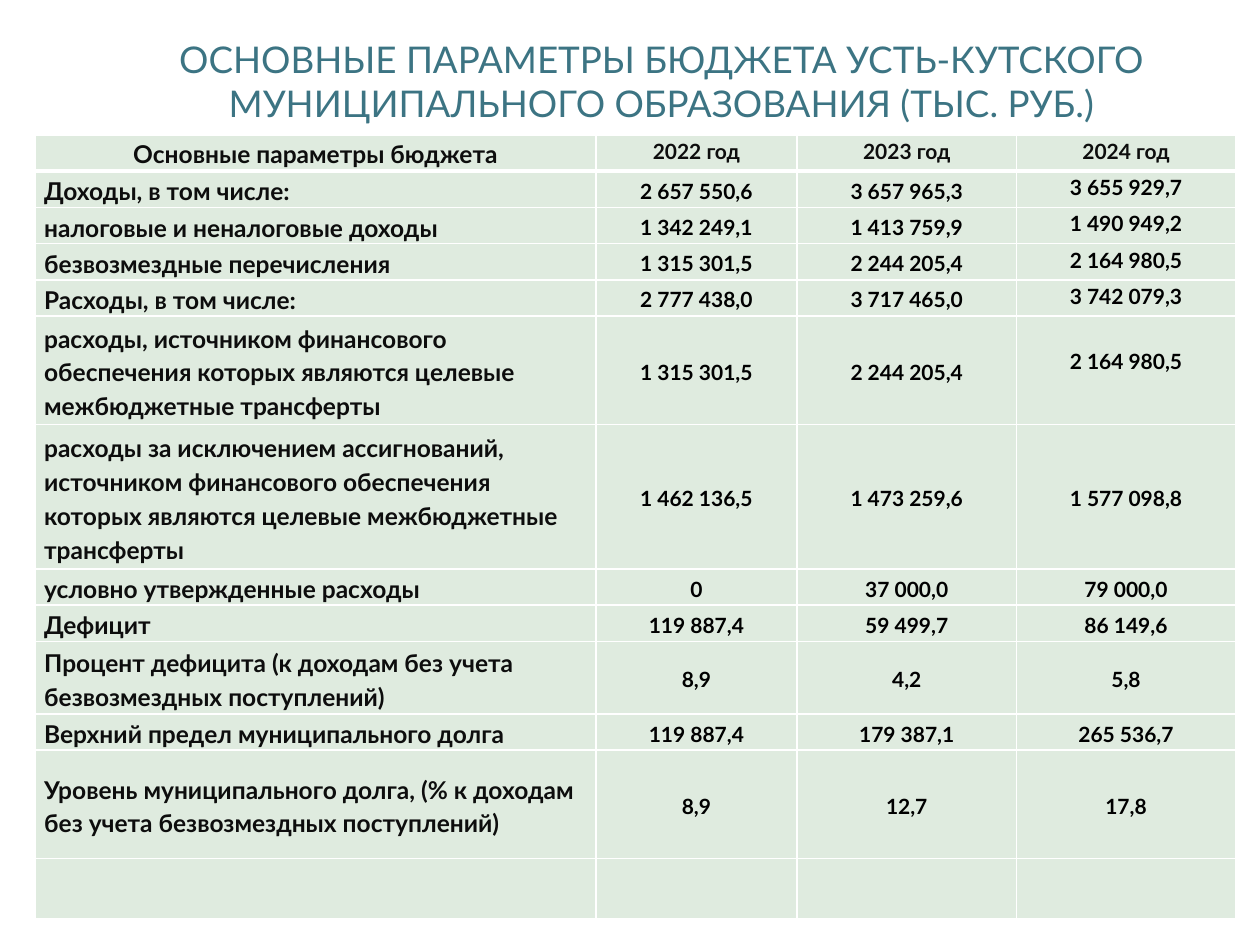
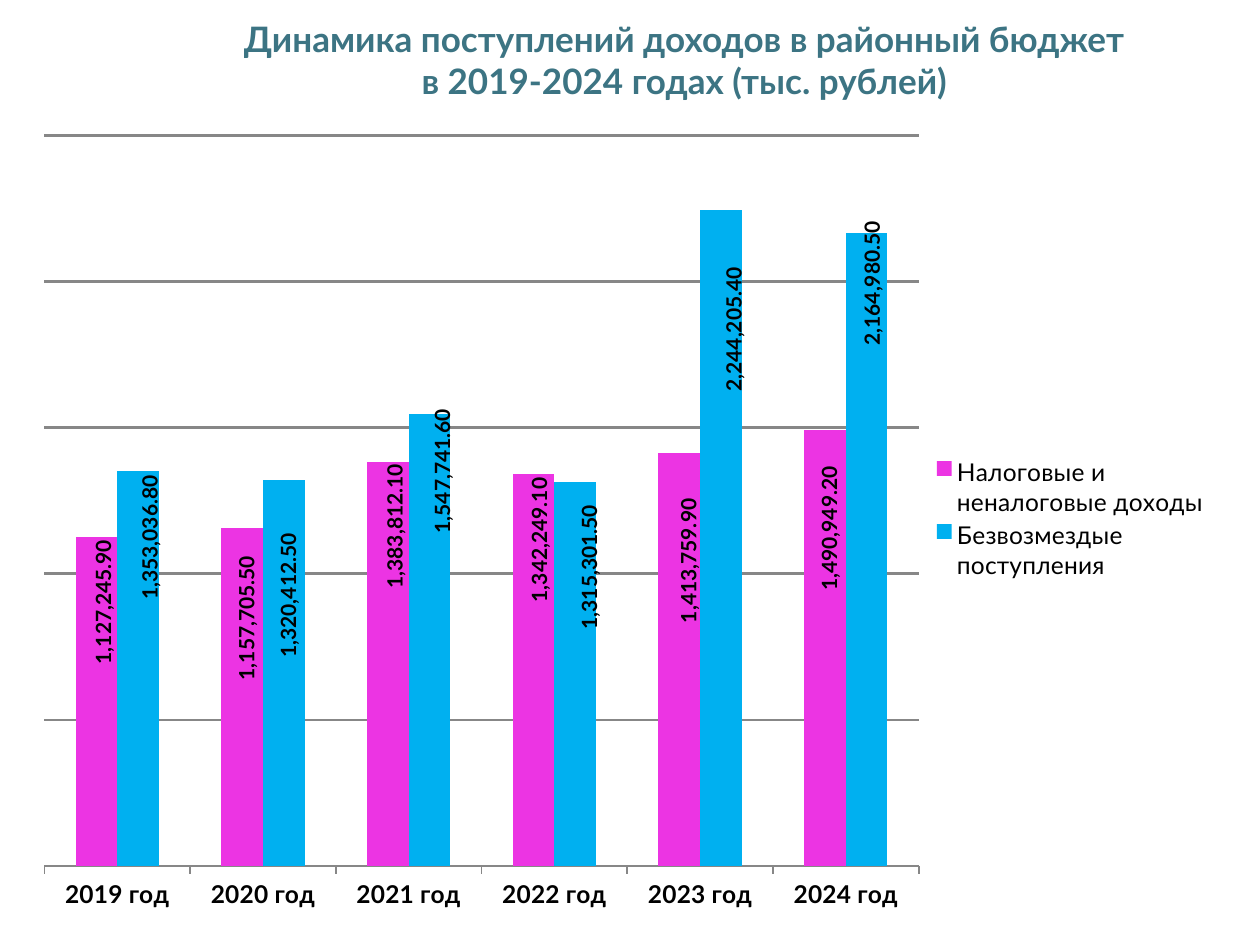
from lxml import etree
from pptx import Presentation
from pptx.chart.data import CategoryChartData
from pptx.dml.color import RGBColor
from pptx.enum.chart import XL_CHART_TYPE, XL_LABEL_POSITION, XL_LEGEND_POSITION, XL_TICK_MARK
from pptx.enum.text import MSO_ANCHOR, MSO_AUTO_SIZE, PP_ALIGN
from pptx.oxml.ns import qn
from pptx.util import Cm, Pt

# Shared look
FONT = "Lato"
TEAL = RGBColor(0x3C, 0x74, 0x83)
PALE_GREEN = RGBColor(0xDF, 0xEB, 0xDF)
WHITE = RGBColor(0xFF, 0xFF, 0xFF)
BLACK = RGBColor(0, 0, 0)
NEAR_BLACK = RGBColor(0x0D, 0x0D, 0x0D)
GREY = RGBColor(0x87, 0x87, 0x87)
MAGENTA = RGBColor(0xEC, 0x34, 0xE3)
SKY_BLUE = RGBColor(0x00, 0xB0, 0xF0)
LEFT, CENTER = PP_ALIGN.LEFT, PP_ALIGN.CENTER
TOP, MIDDLE = MSO_ANCHOR.TOP, MSO_ANCHOR.MIDDLE
NO_AUTOFIT = MSO_AUTO_SIZE.NONE
CLUSTERED = XL_CHART_TYPE.COLUMN_CLUSTERED
OUTSIDE_END = XL_LABEL_POSITION.OUTSIDE_END
LEGEND_RIGHT = XL_LEGEND_POSITION.RIGHT
TICK_OUT, TICK_NONE = XL_TICK_MARK.OUTSIDE, XL_TICK_MARK.NONE
TITLE_ONLY = 5
NUMBER_FORMAT = "#,##0.00"
C15 = "http://schemas.microsoft.com/office/drawing/2012/chart"
C15_LABELS = "{CE6537A1-D6FC-4f65-9D91-7224C49458BB}"

# Budget table: row height in cm, label, one value per year
COLUMN_WIDTHS = [11.3, 4.06, 4.42, 4.42]
LINE, TWO_LINES, THREE_LINES, FOUR_LINES = 0.73, 1.46, 2.19, 2.91
BUDGET_ROWS = [
    (LINE, "Основные параметры бюджета", "2022 год", "2023 год", "2024 год"),
    (LINE, "Доходы, в том числе:", "2 657 550,6", "3 657 965,3", "3 655 929,7"),
    (LINE, "налоговые и неналоговые доходы", "1 342 249,1", "1 413 759,9", "1 490 949,2"),
    (LINE, "безвозмездные перечисления", "1 315 301,5", "2 244 205,4", "2 164 980,5"),
    (LINE, "Расходы, в том числе:", "2 777 438,0", "3 717 465,0", "3 742 079,3"),
    (THREE_LINES, "расходы, источником финансового обеспечения которых являются "
     "целевые межбюджетные трансферты", "1 315 301,5", "2 244 205,4", "2 164 980,5"),
    (FOUR_LINES, "расходы за исключением ассигнований, источником финансового "
     "обеспечения которых являются целевые межбюджетные трансферты",
     "1 462 136,5", "1 473 259,6", "1 577 098,8"),
    (LINE, "условно утвержденные расходы", "0", "37 000,0", "79 000,0"),
    (LINE, "Дефицит", "119 887,4", "59 499,7", "86 149,6"),
    (TWO_LINES, "Процент дефицита (к доходам без учета безвозмездных поступлений)",
     "8,9", "4,2", "5,8"),
    (LINE, "Верхний предел муниципального долга", "119 887,4", "179 387,1", "265 536,7"),
    (THREE_LINES, "Уровень муниципального долга, (% к доходам без учета "
     "безвозмездных поступлений)", "8,9", "12,7", "17,8"),
    (1.22, "", "", "", ""),
]
TRANSFERS_ROW = 5
LAST_TOP_ROW = 5  # in the last column, values down to this row sit at the top

# Revenue chart: name, colour, values, label shifts in percent of the chart
YEARS = [f"{year} год" for year in range(2019, 2025)]
REVENUES = [
    ("Налоговые и неналоговые доходы", MAGENTA,
     [1127245.9, 1157705.5, 1383812.1, 1342249.1, 1413759.9, 1490949.2],
     [(0.5, 16.5), (0.3, 19.6), (0.5, 16.4), (0.4, 16.6), (0.7, 21.8), (0.3, 20.6)]),
    ("Безвозмездые поступления", SKY_BLUE,
     [1353036.8, 1320412.5, 1547741.6, 1315301.5, 2244205.4, 2164980.5],
     [(0.9, 16.7), (0.3, 22.7), (1, 15.5), (1.1, 19), (1, 23.2), (0.4, 14.6)]),
]


def set_font(font, size, color=BLACK, bold=False):
    font.name, font.size, font.bold = FONT, Pt(size), bold
    font.color.rgb = color


def write_text(frame, text, size, color=BLACK, bold=False, align=CENTER, spacing=None):
    paragraph = frame.paragraphs[0]
    paragraph.alignment, paragraph.line_spacing = align, spacing
    run = paragraph.add_run()
    run.text = text
    set_font(run.font, size, color, bold)


def add_titled_slide(prs, text, box, **text_format):
    slide = prs.slides.add_slide(prs.slide_layouts[TITLE_ONLY])
    title = slide.shapes.title
    title.left, title.top, title.width, title.height = map(Cm, box)
    frame = title.text_frame
    frame.word_wrap, frame.auto_size, frame.vertical_anchor = True, NO_AUTOFIT, MIDDLE
    write_text(frame, text, color=TEAL, **text_format)
    return slide


def add_cell_border(cell, side, width):
    line = etree.SubElement(cell._tc.get_or_add_tcPr(), qn(f"a:ln{side}"), w=str(Pt(width)))
    fill = etree.SubElement(line, qn("a:solidFill"))
    etree.SubElement(fill, qn("a:srgbClr"), val=str(WHITE))


def format_cell(cell, row, column):
    heavy_sides = {0: "B", 1: "T"}
    for side in "LRTB":
        add_cell_border(cell, side, 3 if heavy_sides.get(row) == side else 1)
    cell.fill.solid()
    cell.fill.fore_color.rgb = PALE_GREEN
    cell.margin_left = cell.margin_right = Cm(0.18)
    cell.margin_top = cell.margin_bottom = 0
    at_top = row == 0 or (column == 3 and row <= LAST_TOP_ROW)
    cell.vertical_anchor = TOP if at_top else MIDDLE


def add_budget_table(slide):
    table = slide.shapes.add_table(
        len(BUDGET_ROWS), len(COLUMN_WIDTHS), Cm(0.71), Cm(2.72),
        Cm(sum(COLUMN_WIDTHS)), Cm(sum(row[0] for row in BUDGET_ROWS))).table
    for column, width in zip(table.columns, COLUMN_WIDTHS):
        column.width = Cm(width)
    for r, (height, *texts) in enumerate(BUDGET_ROWS):
        table.rows[r].height = Cm(height)
        for c, text in enumerate(texts):
            cell = table.cell(r, c)
            format_cell(cell, r, c)
            if text:
                write_text(cell.text_frame, text, size=12 if c else 14, bold=True,
                           color=BLACK if r and c else NEAR_BLACK,
                           align=LEFT if r and not c else CENTER, spacing=1.15)
    # The last transfers value stands one line lower
    table.cell(TRANSFERS_ROW, 3).margin_top = Cm(0.58)


def set_layout(element, index, **settings):
    for automatic in element.findall(qn("c:layout")):
        element.remove(automatic)
    layout = etree.Element(qn("c:layout"))
    manual = etree.SubElement(layout, qn("c:manualLayout"))
    for tag, value in settings.items():
        etree.SubElement(manual, qn(f"c:{tag}"), val=str(value))
    element.insert(index, layout)


def place_plot_and_legend(chart):
    plot_area = chart._chartSpace.find(".//" + qn("c:plotArea"))
    set_layout(plot_area, 0, layoutTarget="inner", xMode="edge", yMode="edge",
               x=0.016, y=0.024, w=0.728, h=0.909)
    set_layout(chart.legend._element, 1, xMode="edge", yMode="edge",
               x=0.75, y=0.42, w=0.24, h=0.16)


def hide_leader_lines(labels):
    for leader_lines in labels._element.findall(qn("c:showLeaderLines")):
        leader_lines.set("val", "0")
    extensions = etree.SubElement(labels._element, qn("c:extLst"))
    extension = etree.SubElement(extensions, qn("c:ext"), nsmap={"c15": C15}, uri=C15_LABELS)
    etree.SubElement(extension, f"{{{C15}}}showLeaderLines", val="0")


def format_labels(series, shifts):
    labels = series.data_labels
    labels.show_value = True
    labels.number_format, labels.number_format_is_linked = NUMBER_FORMAT, False
    set_font(labels.font, 12, bold=True)
    for i in range(len(shifts)):
        label = series.points[i].data_label
        label.position = OUTSIDE_END
        set_font(label.font, 12, bold=True)
    # Turn each label upright and move it into its column
    for element, (dx, dy) in zip(series._element.iter(qn("c:dLbl")), shifts):
        set_layout(element, 1, x=round(dx / 100, 4), y=round(dy / 100, 4))
    for body in labels._element.iter(qn("a:bodyPr")):
        body.set("rot", "-5400000")
        body.set("vert", "horz")
    hide_leader_lines(labels)


def format_axes(chart):
    years = chart.category_axis
    years.major_tick_mark, years.minor_tick_mark = TICK_OUT, TICK_NONE
    set_font(years.tick_labels.font, 14, bold=True)
    amounts = chart.value_axis
    amounts.minimum_scale, amounts.maximum_scale, amounts.major_unit = 0, 2500000, 500000
    amounts.has_major_gridlines = True
    amounts.visible = False
    for line, width in ((years.format.line, 1), (amounts.major_gridlines.format.line, 1.5)):
        line.color.rgb = GREY
        line.width = Pt(width)


def add_revenue_chart(slide):
    data = CategoryChartData(number_format=NUMBER_FORMAT)
    data.categories = YEARS
    for name, _, values, _ in REVENUES:
        data.add_series(name, values)
    chart = slide.shapes.add_chart(
        CLUSTERED, Cm(0.51), Cm(2.34), Cm(24.21), Cm(16.21), data).chart
    set_font(chart.font, 18)
    chart.has_title = False
    chart.has_legend = True
    chart.legend.position = LEGEND_RIGHT
    chart.legend.include_in_layout = False
    set_font(chart.legend.font, 14)
    format_axes(chart)
    place_plot_and_legend(chart)
    plot = chart.plots[0]
    plot.gap_width, plot.overlap, plot.vary_by_categories = 150, 0, False
    for series, (_, color, _, shifts) in zip(plot.series, REVENUES):
        series.format.fill.solid()
        series.format.fill.fore_color.rgb = color
        format_labels(series, shifts)


def main():
    prs = Presentation()
    prs.slide_width, prs.slide_height = Cm(25.4), Cm(19.05)

    # Budget parameters
    budget = add_titled_slide(
        prs, "ОСНОВНЫЕ ПАРАМЕТРЫ БЮДЖЕТА УСТЬ-КУТСКОГО МУНИЦИПАЛЬНОГО ОБРАЗОВАНИЯ (ТЫС. РУБ.)",
        (1.27, 0.33, 24.13, 2.59), size=21)
    add_budget_table(budget)

    # Revenue by year
    revenue = add_titled_slide(
        prs, "Динамика поступлений доходов в районный бюджет в 2019-2024 годах (тыс. рублей)",
        (4.5, 0.71, 18.59, 0.99), size=20, bold=True)
    add_revenue_chart(revenue)

    prs.save("out.pptx")


if __name__ == "__main__":
    main()
